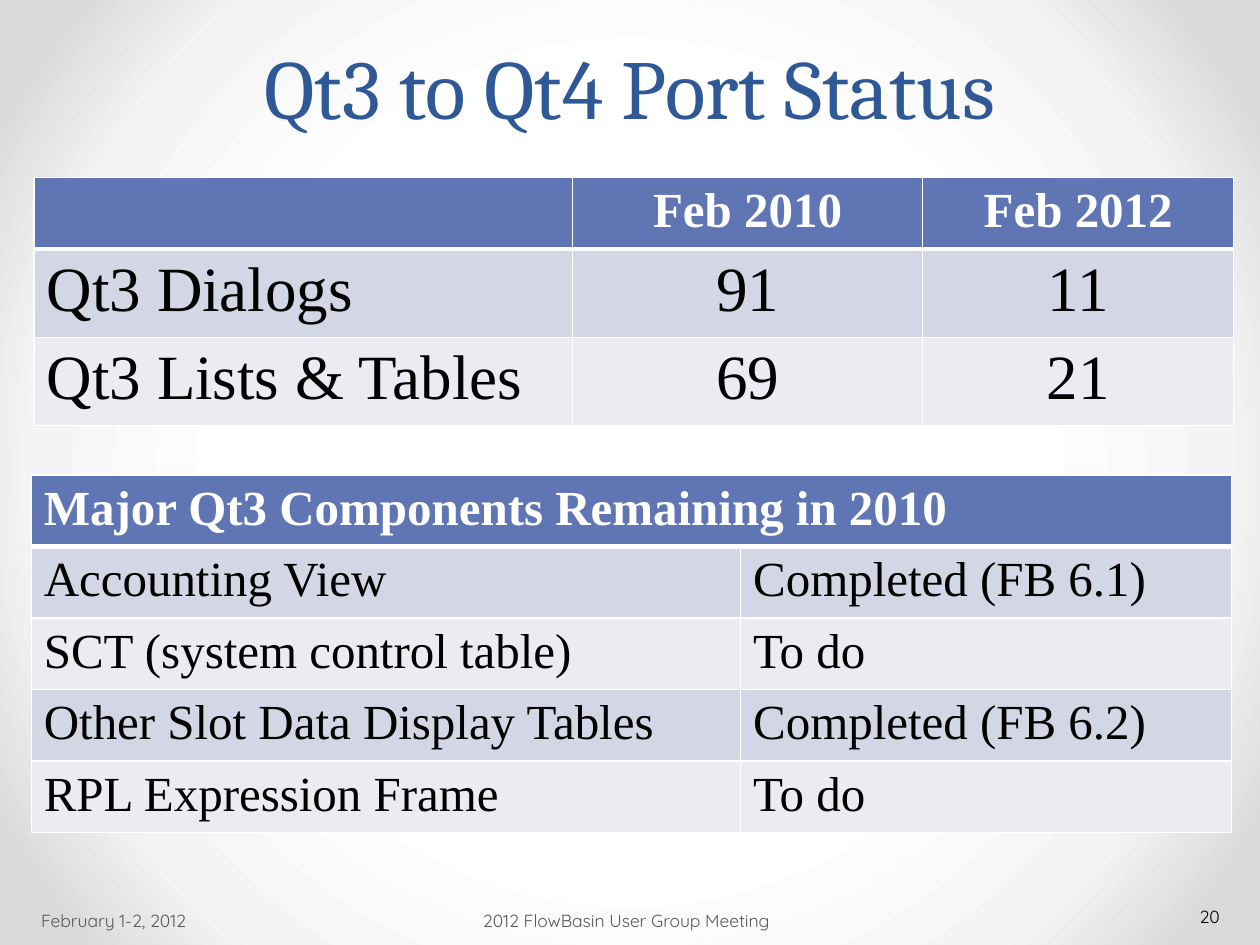
"""Build the Qt port status slide with its two tables."""
from lxml.etree import SubElement
from pptx import Presentation
from pptx.dml.color import RGBColor
from pptx.enum.text import MSO_ANCHOR, PP_ALIGN
from pptx.oxml import parse_xml
from pptx.oxml.ns import nsdecls, qn
from pptx.util import Cm, Pt

COLORS = {
    "title": "2F5897", "footer": "595959", "text": "000000", "white": "FFFFFF",
    "header": "6076B4", "band_dark": "D2D6E5", "band_light": "EAECF2",
    "glow": "F4F4F4", "edge": "DADADA",
}
BODY_FONT = "Times New Roman"
FOOTER_FONT = "Quicksand"


def set_background(s):
    s.background.fill.gradient()
    grad = s.element.find(".//" + qn("a:gradFill"))
    for child in list(grad):
        grad.remove(child)
    stops = SubElement(grad, qn("a:gsLst"))
    for pos, color in ((50, "white"), (76, "glow"), (92, "edge")):
        stop = SubElement(stops, qn("a:gs"), pos=str(pos * 1000))
        SubElement(stop, qn("a:srgbClr"), val=COLORS[color])
    circle = SubElement(grad, qn("a:path"), path="circle")
    SubElement(circle, qn("a:fillToRect"), l="50000", t="50000", r="50000", b="50000")


def style_paragraph(p, font, size, color, align=PP_ALIGN.LEFT, bold=False):
    p.alignment = align
    p.font.name = font
    p.font.size = Pt(size)
    p.font.bold = bold
    p.font.color.rgb = RGBColor.from_string(COLORS[color])


def add_text(s, text, box, font, size, color, align=PP_ALIGN.LEFT,
             anchor=MSO_ANCHOR.MIDDLE, margins=(0.25, 0.25)):
    tf = s.shapes.add_textbox(*map(Cm, box)).text_frame
    tf.word_wrap = True
    tf.vertical_anchor = anchor
    tf.margin_left, tf.margin_right = map(Cm, margins)
    p = tf.paragraphs[0]
    p.text = text
    style_paragraph(p, font, size, color, align)
    return p


def set_borders(cell, bottom):
    props = cell._tc.get_or_add_tcPr()
    for i, (side, width) in enumerate((("L", 1), ("R", 1), ("T", 1), ("B", bottom))):
        props.insert(i, parse_xml(
            f'<a:ln{side} {nsdecls("a")} w="{Pt(width)}"><a:solidFill>'
            f'<a:srgbClr val="{COLORS["white"]}"/></a:solidFill></a:ln{side}>'))


def add_table(s, left, top, widths, heights, rows, body_size, value_align):
    box = map(Cm, (left, top, sum(widths), sum(heights)))
    table = s.shapes.add_table(len(rows), len(widths), *box).table
    for column, width in zip(table.columns, widths):
        column.width = Cm(width)
    for i, (row, height, texts) in enumerate(zip(table.rows, heights, rows)):
        row.height = Cm(height)
        header = i == 0
        fill = "header" if header else "band_dark" if i % 2 else "band_light"
        for j, (cell, text) in enumerate(zip(row.cells, texts)):
            cell.fill.solid()
            cell.fill.fore_color.rgb = RGBColor.from_string(COLORS[fill])
            set_borders(cell, 3 if header else 1)
            p = cell.text_frame.paragraphs[0]
            p.text = text
            style_paragraph(p, BODY_FONT, 28 if header else body_size,
                            "white" if header else "text",
                            value_align if j else PP_ALIGN.LEFT, header)
    return table


def main():
    prs = Presentation()
    prs.slide_width, prs.slide_height = Cm(25.4), Cm(19.05)
    s = prs.slides.add_slide(prs.slide_layouts[6])
    set_background(s)

    add_text(s, "February 1-2, 2012", (0.58, 18.21, 5.79, 0.71), FOOTER_FONT, 10,
             "footer", margins=(0.25, 0.13))
    add_text(s, "2012 FlowBasin User Group Meeting", (7.87, 18.21, 9.63, 0.69),
             FOOTER_FONT, 10, "footer", PP_ALIGN.CENTER, margins=(0.13, 0.25))
    title = add_text(s, "Qt3 to Qt4 Port Status", (0.66, 0.58, 24.08, 2.29),
                     "Cambria", 48, "title", PP_ALIGN.CENTER)
    title.line_spacing = Pt(58)

    add_table(s, 0.69, 3.58, (10.85, 7.06, 6.27), (1.38, 1.65, 1.65), (
        ("", "Feb 2010", "Feb 2012"),
        ("Qt3 Dialogs", "91", "11"),
        ("Qt3 Lists & Tables", "69", "21"),
    ), 36, PP_ALIGN.CENTER)
    add_text(s, "20", (23.27, 18.14, 1.57, 0.71), FOOTER_FONT, 10, "text",
             PP_ALIGN.RIGHT, MSO_ANCHOR.TOP)
    components = add_table(s, 0.63, 9.58, (14.3, 9.9), (1.35,) * 5, (
        ("Major Qt3 Components Remaining in 2010", ""),
        ("Accounting View", "Completed (FB 6.1)"),
        ("SCT (system control table)", "To do"),
        ("Other Slot Data Display Tables", "Completed (FB 6.2)"),
        ("RPL Expression Frame", "To do"),
    ), 28, PP_ALIGN.LEFT)
    components.cell(0, 0).merge(components.cell(0, 1))

    prs.save("out.pptx")


if __name__ == "__main__":
    main()
